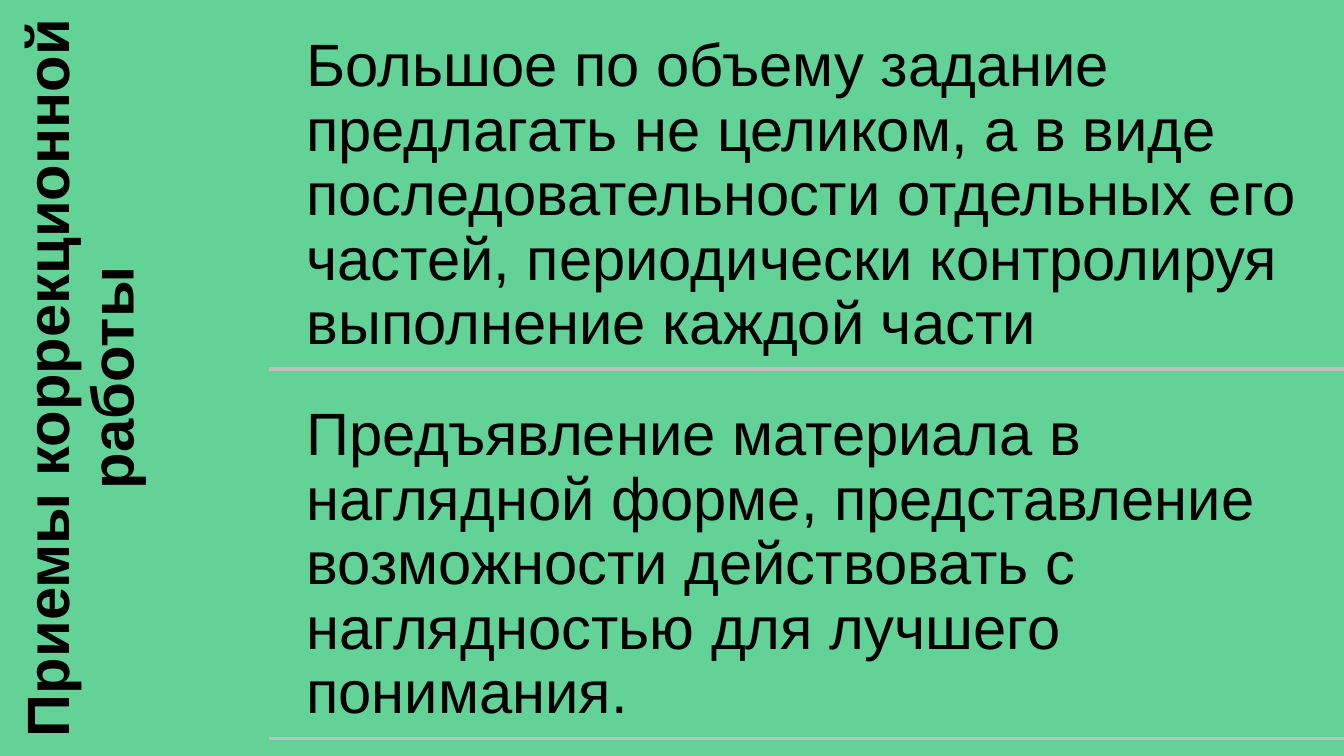
from dataclasses import dataclass

from lxml import etree
from pptx import Presentation, util as u
from pptx.dml.color import RGBColor
from pptx.enum import shapes, text
from pptx.oxml import ns

TITLE = "Приемы коррекционной работы"
METHODS = [
    "Большое по объему задание предлагать не целиком, а в виде последовательности "
    "отдельных его частей, периодически контролируя выполнение каждой части",
    "Предъявление материала в наглядной форме, представление возможности "
    "действовать с наглядностью для лучшего понимания.",
]


@dataclass(frozen=True)
class Theme:
    background: str = "63D297"
    ink: str = "000000"
    rule: str = "BFBFC1"
    font: str = "Arial"
    size: int = 32
    rule_width: int = 2
    line_spacing: float = 0.9


THEME = Theme()
WIDTH = 10
HEIGHT = WIDTH * 9 / 16
TITLE_WIDTH = WIDTH / 5
INDENT = 0.15
GAP = 0.13
ROW_HEIGHT = (HEIGHT - GAP * (len(METHODS) + 1)) / len(METHODS)


def add_text(page, words, left, top, width, height, bold=False):
    box = page.shapes.add_textbox(*map(u.Inches, (left, top, width, height)))
    frame = box.text_frame
    frame.word_wrap = True
    frame.vertical_anchor = text.MSO_ANCHOR.TOP
    frame.margin_left = frame.margin_right = u.Inches(GAP)
    frame.margin_top = frame.margin_bottom = u.Inches(GAP)
    para = frame.paragraphs[0]
    para.text = words
    para.line_spacing = THEME.line_spacing
    para.font.name = THEME.font
    para.font.size = u.Pt(THEME.size)
    para.font.bold = bold
    para.font.color.rgb = RGBColor.from_string(THEME.ink)
    return box


def add_rule(page, top):
    ends = map(u.Inches, (TITLE_WIDTH, top, WIDTH, top))
    rule = page.shapes.add_connector(shapes.MSO_CONNECTOR.STRAIGHT, *ends)
    rule.line.color.rgb = RGBColor.from_string(THEME.rule)
    rule.line.width = u.Pt(THEME.rule_width)
    etree.SubElement(rule.element.spPr, ns.qn("a:effectLst"))


def main():
    deck = Presentation()
    deck.slide_width, deck.slide_height = u.Inches(WIDTH), u.Inches(HEIGHT)
    page = deck.slides.add_slide(deck.slide_layouts[6])
    page.background.fill.solid()
    page.background.fill.fore_color.rgb = RGBColor.from_string(THEME.background)

    title = add_text(page, TITLE, 0, 0, TITLE_WIDTH, HEIGHT, bold=True)
    title.text_frame.paragraphs[0].alignment = text.PP_ALIGN.CENTER
    title.element.txBody.bodyPr.set("vert", "vert270")

    left = TITLE_WIDTH + INDENT
    for row, method in enumerate(METHODS):
        top = GAP + row * (ROW_HEIGHT + GAP)
        add_text(page, method, left, top, WIDTH - left, ROW_HEIGHT)
        add_rule(page, top + ROW_HEIGHT)

    deck.save("out.pptx")


if __name__ == "__main__":
    main()
